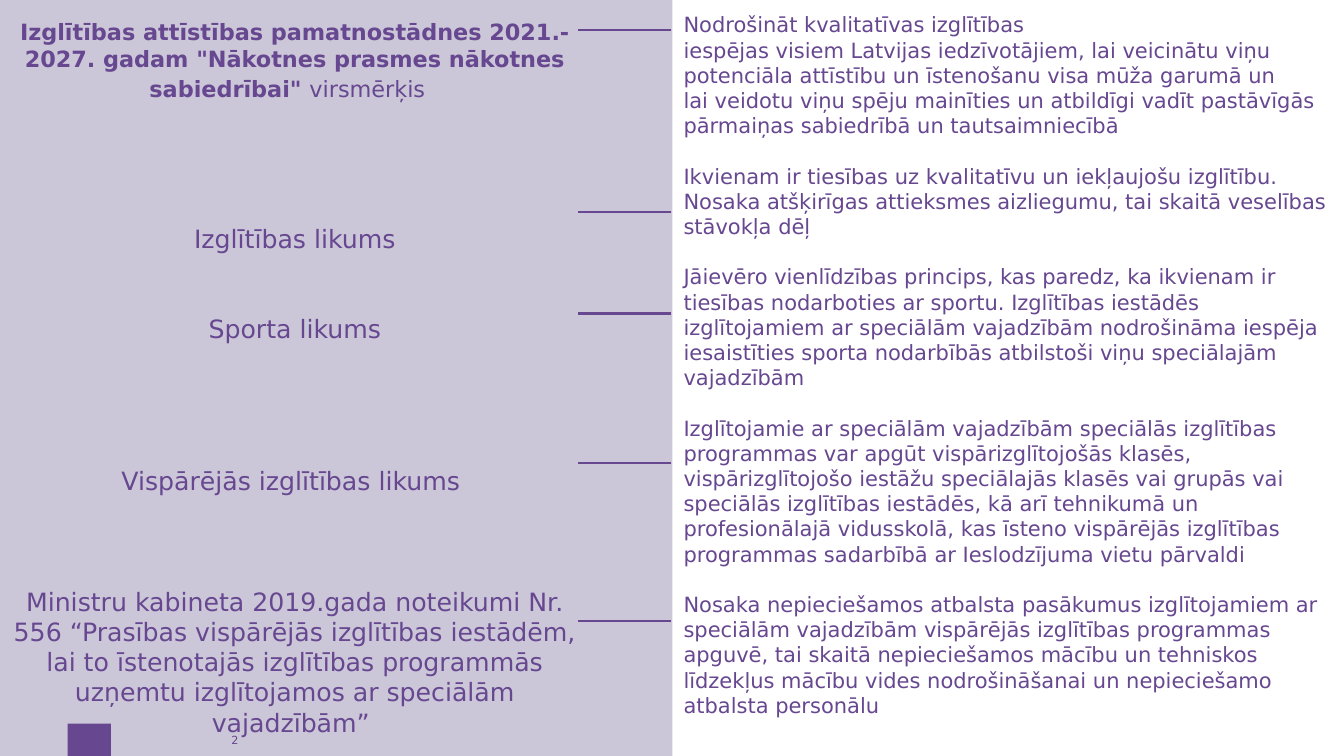
from pptx import Presentation
from pptx.dml.color import RGBColor
from pptx.enum.shapes import MSO_CONNECTOR, MSO_SHAPE
from pptx.enum.text import MSO_ANCHOR, MSO_AUTO_SIZE, PP_ALIGN
from pptx.oxml.ns import qn
from pptx.util import Inches, Pt
from lxml import etree

RECTANGLE = MSO_SHAPE.RECTANGLE
STRAIGHT = MSO_CONNECTOR.STRAIGHT
TOP, MIDDLE = MSO_ANCHOR.TOP, MSO_ANCHOR.MIDDLE
LEFT, CENTER = PP_ALIGN.LEFT, PP_ALIGN.CENTER
NO_FIT = MSO_AUTO_SIZE.NONE

COLORS = {"panel": "CBC7D8", "accent": "664790"}
FONT = "DejaVu Sans"
LEADING = 1.2

GOAL = [
    ('Izglītības attīstības pamatnostādnes 2021.-2027. gadam "Nākotnes prasmes nākotnes sabiedrībai" ', 16, True),
    ("virsmērķis ", 16, False),
    (" ", 18, False),
]
LAWS = [
    (4, "Izglītības likums"),
    (2, "Sporta likums"),
    (4, "Vispārējās izglītības likums "),
    (3, "Ministru kabineta 2019.gada noteikumi Nr. 556 “Prasības vispārējās izglītības iestādēm, lai to "
        "īstenotajās izglītības programmās uzņemtu izglītojamos ar speciālām vajadzībām” "),
]
PROVISIONS = [
    ["Nodrošināt kvalitatīvas izglītības",
     "iespējas visiem Latvijas iedzīvotājiem, lai veicinātu viņu potenciāla attīstību un īstenošanu "
     "visa mūža garumā un",
     "lai veidotu viņu spēju mainīties un atbildīgi vadīt pastāvīgās pārmaiņas sabiedrībā un tautsaimniecībā"],
    ["Ikvienam ir tiesības uz kvalitatīvu un iekļaujošu izglītību.",
     "Nosaka atšķirīgas attieksmes aizliegumu, tai skaitā veselības stāvokļa dēļ"],
    ["Jāievēro vienlīdzības princips, kas paredz, ka ikvienam ir tiesības nodarboties ar sportu. "
     "Izglītības iestādēs izglītojamiem ar speciālām vajadzībām nodrošināma iespēja iesaistīties "
     "sporta nodarbībās atbilstoši viņu speciālajām vajadzībām"],
    ["Izglītojamie ar speciālām vajadzībām speciālās izglītības programmas var apgūt "
     "vispārizglītojošās klasēs, vispārizglītojošo iestāžu speciālajās klasēs vai grupās vai speciālās "
     "izglītības iestādēs, kā arī tehnikumā un profesionālajā vidusskolā, kas īsteno vispārējās "
     "izglītības programmas sadarbībā ar Ieslodzījuma vietu pārvaldi"],
    ["Nosaka nepieciešamos atbalsta pasākumus izglītojamiem ar speciālām vajadzībām vispārējās "
     "izglītības programmas apguvē, tai skaitā nepieciešamos mācību un tehniskos līdzekļus mācību "
     "vides nodrošināšanai un nepieciešamo atbalsta personālu"],
]
LINK_HEIGHTS = [0.3, 2.1, 3.11, 4.59, 6.16]


def apply(target, **values):
    """Set each given attribute on the target."""
    for name, value in values.items():
        setattr(target, name, value)


def place(shape, box):
    """Move and size a shape to the box in inches."""
    apply(shape, **dict(zip(("left", "top", "width", "height"), map(Inches, box))))


def prepare_frame(shape, insets, anchor=TOP):
    """Format a text frame and return it."""
    frame = shape.text_frame
    sides = ("margin_left", "margin_top", "margin_right", "margin_bottom")
    apply(frame, word_wrap=True, auto_size=NO_FIT, vertical_anchor=anchor,
          **dict(zip(sides, map(Inches, insets))))
    return frame


def write(frame, spans, first=False, align=LEFT, gap_lines=0):
    """Write one paragraph of (text, size, bold) spans after a gap of whole lines."""
    para = frame.paragraphs[0] if first else frame.add_paragraph()
    size = spans[-1][1]
    apply(para, alignment=align, space_before=Pt(gap_lines * size * LEADING), space_after=Pt(0))
    for text, size, bold in spans:
        span = para.add_run()
        span.text = text
        apply(span.font, name=FONT, size=Pt(size), bold=bold)
        span.font.color.rgb = RGBColor.from_string(COLORS["accent"])


def add_block(page, box, color):
    """Add a plain filled rectangle."""
    block = page.shapes.add_shape(RECTANGLE, *map(Inches, box))
    block.shadow.inherit = False
    block.fill.solid()
    block.fill.fore_color.rgb = RGBColor.from_string(COLORS[color])
    block.line.fill.background()


def add_documents(page, box):
    """Place the title listing the policy documents and laws."""
    title = page.shapes.title
    title.element.getparent().append(title.element)
    place(title, box)
    frame = prepare_frame(title, (0, 0.05, 0, 0.05))
    write(frame, GOAL, first=True, align=CENTER)
    for gap_lines, law in LAWS:
        write(frame, [(law, 18, False)], align=CENTER, gap_lines=gap_lines)


def add_provisions(page, box):
    """Place what each document provides, one group after another."""
    frame = prepare_frame(page.shapes.add_textbox(*map(Inches, box)), (0, 0.05, 0.1, 0.05))
    for group_index, group in enumerate(PROVISIONS):
        for index, text in enumerate(group):
            write(frame, [(text, 15, False)], first=group_index + index == 0,
                  gap_lines=int(group_index > 0 and index == 0))


def add_page_number(page, box):
    """Place the page number."""
    frame = prepare_frame(page.shapes.add_textbox(*map(Inches, box)), [0.04] * 4, MIDDLE)
    write(frame, [("2", 8, False)], first=True, align=CENTER)


def add_links(page, left, right):
    """Draw the lines that lead from documents to provisions."""
    for height in LINK_HEIGHTS:
        link = page.shapes.add_connector(STRAIGHT, *map(Inches, (right, height, left, height)))
        link.line.color.rgb = RGBColor.from_string(COLORS["accent"])
        link.line.width = Pt(1.5)
        etree.SubElement(link.element.spPr, qn("a:effectLst"))


def main():
    """Build and save the deck."""
    deck = Presentation()
    apply(deck, slide_width=Inches(13.33), slide_height=Inches(7.5))
    page = deck.slides.add_slide(deck.slide_layouts[5])
    add_block(page, (0, 0, 6.67, 7.5), "panel")
    add_block(page, (0.67, 7.18, 0.43, 0.32), "accent")
    add_documents(page, (0.11, 0.13, 5.63, 7.05))
    add_provisions(page, (6.78, 0.07, 6.5, 7.23))
    add_page_number(page, (2.17, 7.18, 0.32, 0.32))
    add_links(page, 5.73, 6.66)
    deck.save("out.pptx")


if __name__ == "__main__":
    main()
